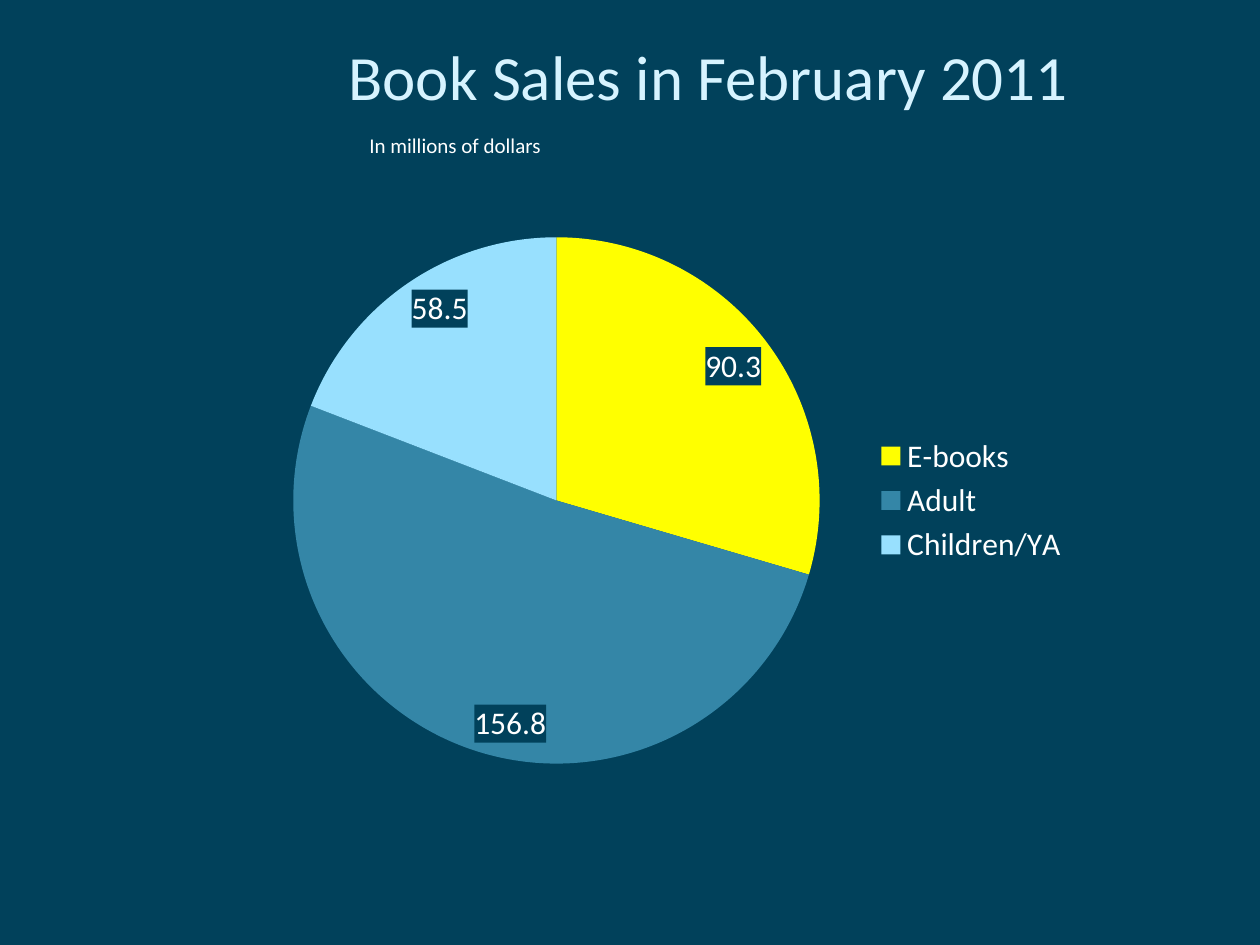
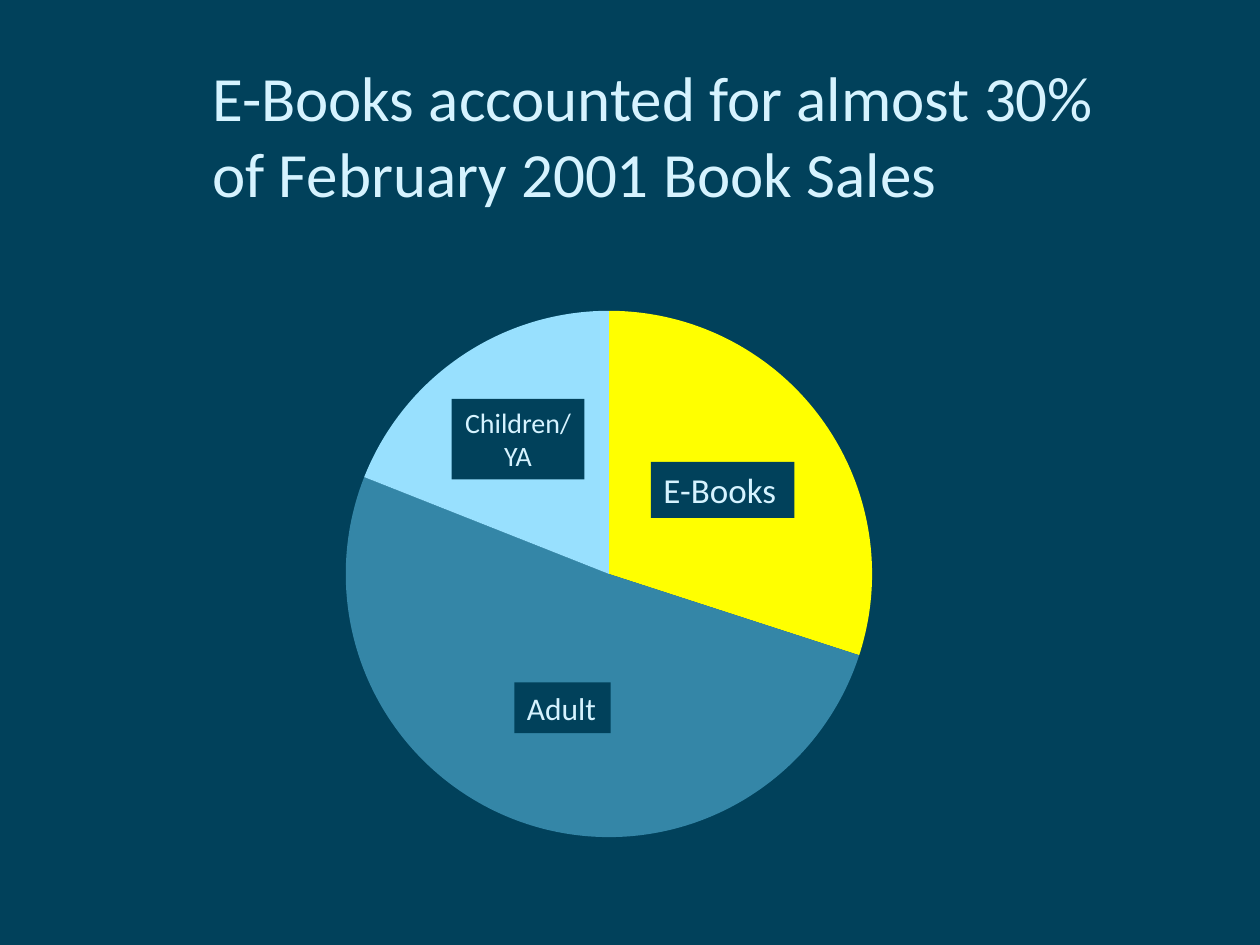
from lxml import etree
from pptx import Presentation
from pptx.chart.data import CategoryChartData
from pptx.dml.color import RGBColor
from pptx.enum.chart import XL_CHART_TYPE, XL_LABEL_POSITION, XL_LEGEND_POSITION
from pptx.enum.text import MSO_ANCHOR, MSO_AUTO_SIZE, PP_ALIGN
from pptx.oxml import parse_xml
from pptx.oxml.ns import nsdecls, qn
from pptx.util import Pt

PIE = XL_CHART_TYPE.PIE
INSIDE_END = XL_LABEL_POSITION.INSIDE_END
LEGEND_RIGHT = XL_LEGEND_POSITION.RIGHT
TOP = MSO_ANCHOR.TOP
NO_AUTOFIT = MSO_AUTO_SIZE.NONE
LEFT, CENTER = PP_ALIGN.LEFT, PP_ALIGN.CENTER

NAVY = RGBColor(0x01, 0x41, 0x5B)
PALE_BLUE = RGBColor(0xD6, 0xF3, 0xFF)
WHITE = RGBColor(0xFF, 0xFF, 0xFF)
YELLOW = RGBColor(0xFF, 0xFF, 0x00)
TEAL = RGBColor(0x34, 0x86, 0xA7)
SKY_BLUE = RGBColor(0x98, 0xE0, 0xFE)
SLICE_COLORS = (YELLOW, TEAL, SKY_BLUE)

FONT = "Calibri"
TITLE_ONLY = 5
CHART_WIDTH, CHART_HEIGHT = 480, 320
PIE_TOP, PIE_WIDTH, PIE_HEIGHT = 0.03, 0.63, 0.94


def style_font(font, size, color):
    font.name = FONT
    font.size = Pt(size)
    font.color.rgb = color


def add_titled_slide(presentation, text, left, top, width):
    slide = presentation.slides.add_slide(presentation.slide_layouts[TITLE_ONLY])
    title = slide.shapes.title
    title.left, title.top = Pt(left), Pt(top)
    title.width, title.height = Pt(width), Pt(90)
    frame = title.text_frame
    frame.text = text
    frame.word_wrap = True
    frame.auto_size = NO_AUTOFIT
    frame.vertical_anchor = TOP
    paragraph = frame.paragraphs[0]
    paragraph.alignment = LEFT
    style_font(paragraph.font, 36, PALE_BLUE)
    return slide


def place_pie(chart, pie_left):
    plot_area = chart._chartSpace.chart.plotArea
    for layout in plot_area.findall(qn("c:layout")):
        plot_area.remove(layout)
    layout = parse_xml(f"<c:layout {nsdecls('c')}/>")
    manual = etree.SubElement(layout, qn("c:manualLayout"))
    settings = (
        ("layoutTarget", "inner"), ("xMode", "edge"), ("yMode", "edge"),
        ("x", pie_left), ("y", PIE_TOP), ("w", PIE_WIDTH), ("h", PIE_HEIGHT),
    )
    for name, value in settings:
        etree.SubElement(manual, qn(f"c:{name}")).set("val", str(value))
    plot_area.insert(0, layout)


def add_pie(slide, categories, values, left, top, pie_left):
    data = CategoryChartData()
    data.categories = categories
    data.add_series("Series 1", values)
    chart = slide.shapes.add_chart(
        PIE, Pt(left), Pt(top), Pt(CHART_WIDTH), Pt(CHART_HEIGHT), data
    ).chart
    chart.has_title = False
    chart.has_legend = False
    style_font(chart.font, 18, WHITE)
    plot = chart.plots[0]
    plot.vary_by_categories = True
    for index, color in enumerate(SLICE_COLORS):
        slice_format = plot.series[0].points[index].format
        slice_format.fill.solid()
        slice_format.fill.fore_color.rgb = color
        slice_format.line.fill.background()
    place_pie(chart, pie_left)
    return chart


def add_legend(chart):
    chart.has_legend = True
    chart.legend.position = LEGEND_RIGHT
    chart.legend.include_in_layout = False
    style_font(chart.legend.font, 18, WHITE)


def add_value_labels(chart):
    labels = chart.plots[0].series[0].data_labels
    labels.show_value = True
    labels.show_percentage = False
    labels.show_category_name = False
    labels.show_legend_key = False
    labels.position = INSIDE_END
    style_font(labels.font, 18, WHITE)
    fill = parse_xml(
        f'<c:spPr {nsdecls("c", "a")}><a:solidFill><a:srgbClr val="{NAVY}"/>'
        "</a:solidFill></c:spPr>"
    )
    labels._element.find(qn("c:txPr")).addprevious(fill)


def add_label(slide, text, left, top, width, height, size, color, alignment=LEFT):
    label = slide.shapes.add_textbox(Pt(left), Pt(top), Pt(width), Pt(height))
    label.fill.solid()
    label.fill.fore_color.rgb = NAVY
    frame = label.text_frame
    frame.text = text
    frame.word_wrap = True
    frame.margin_left = Pt(7.2) if alignment == LEFT else 0
    frame.margin_right = 0
    for paragraph in frame.paragraphs:
        paragraph.alignment = alignment
        style_font(paragraph.font, size, color)


def build_sales_slide(presentation):
    slide = add_titled_slide(presentation, "Book Sales in February 2011", 192, 18, 456)
    chart = add_pie(
        slide, ("E-books", "Adult", "Children/YA"), (90.3, 156.8, 58.5), 138, 126, 0.06
    )
    add_legend(chart)
    add_value_labels(chart)
    add_label(slide, "In millions of dollars", 204, 72, 114, 22, 12, WHITE)


def build_share_slide(presentation):
    slide = add_titled_slide(
        presentation,
        "E-Books accounted for almost 30% of February 2001 Book Sales",
        114, 30, 522,
    )
    add_pie(slide, ("1", "2", "3"), (30, 51, 19), 108, 168, (1 - PIE_WIDTH) / 2)
    add_label(slide, "E-Books", 372, 264, 82, 32, 20, PALE_BLUE)
    add_label(slide, "Children/\nYA", 258, 228, 76, 46, 16, PALE_BLUE, CENTER)
    add_label(slide, "Adult", 294, 390, 55, 29, 18, PALE_BLUE)


def main():
    presentation = Presentation()
    presentation.slide_width, presentation.slide_height = Pt(720), Pt(540)
    background = presentation.slide_master.background.fill
    background.solid()
    background.fore_color.rgb = NAVY
    build_sales_slide(presentation)
    build_share_slide(presentation)
    presentation.save("out.pptx")


if __name__ == "__main__":
    main()
